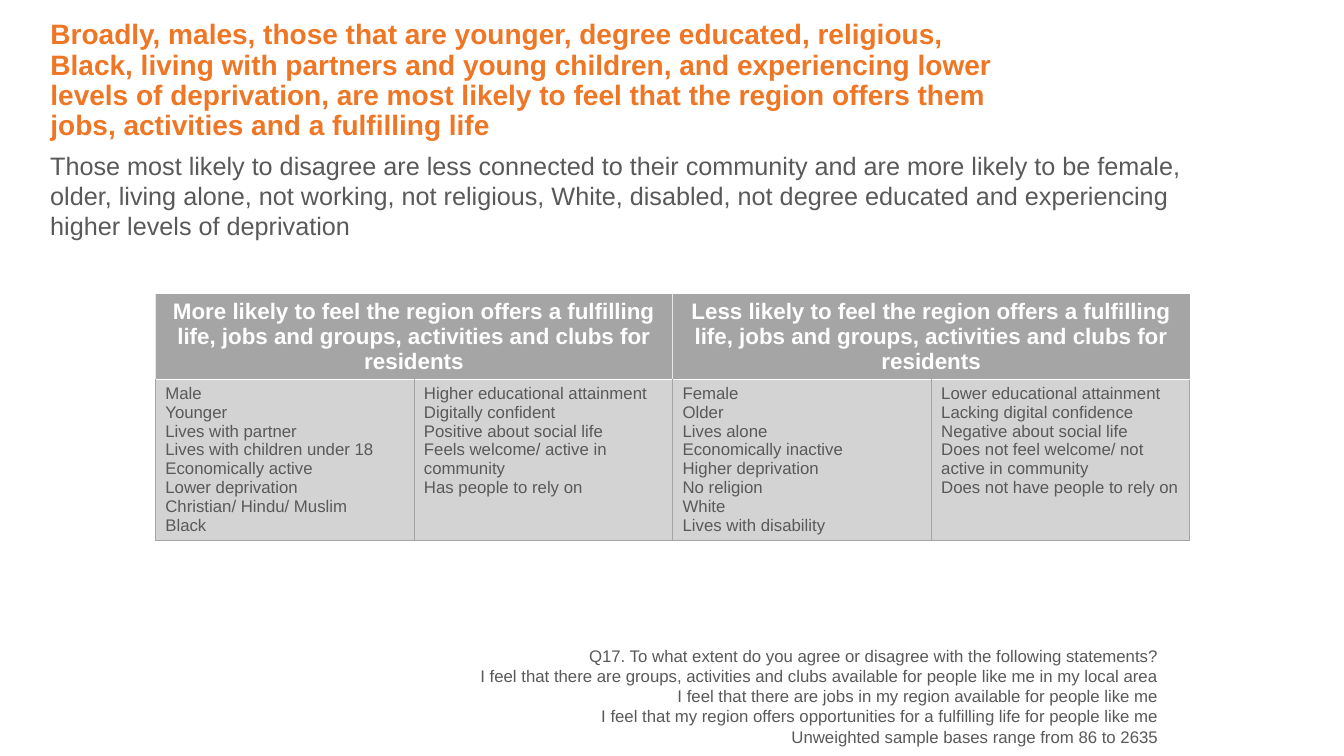
from dataclasses import dataclass

from lxml import etree
from pptx import Presentation
from pptx import util as u
from pptx.dml.color import RGBColor
from pptx.enum import text as t
from pptx.oxml import ns


@dataclass(frozen=True)
class Theme:
    """Colours, font and type sizes of the slide."""
    font: str = "Arial"
    accent: str = "EE7624"
    ink: str = "595959"
    white: str = "FFFFFF"
    grey: str = "A5A5A5"
    pale: str = "D3D3D3"
    rule: str = "E7E6E6"
    title: int = 20
    lead: int = 18
    head: int = 16
    small: int = 12


class Deck:
    """Holds the style and the current slide."""

    def __init__(self, theme):
        """Open a widescreen deck with one title-only slide."""
        self.theme = theme
        self.prs = Presentation()
        self.prs.slide_width = u.Inches(13.33)
        self.prs.slide_height = u.Inches(7.5)
        self.slide = self.prs.slides.add_slide(self.prs.slide_layouts[5])

    def fill(self, frame, lines, size, color, bold=False, align=t.PP_ALIGN.LEFT, space=1.0):
        """Fill a text frame with one paragraph per line."""
        frame.word_wrap = True
        for i, line in enumerate(lines):
            para = frame.paragraphs[0] if i == 0 else frame.add_paragraph()
            para.alignment = align
            para.line_spacing = space
            para.space_before = u.Pt(0)
            run = para.add_run()
            run.text = line
            run.font.name = self.theme.font
            run.font.size = u.Pt(size)
            run.font.bold = bold
            run.font.color.rgb = RGBColor.from_string(color)

    def title(self, box, line):
        """Place and fill the title."""
        shape = self.slide.shapes.title
        shape.left, shape.top, shape.width, shape.height = map(u.Inches, box)
        frame = shape.text_frame
        frame.auto_size = t.MSO_AUTO_SIZE.NONE
        frame.vertical_anchor = t.MSO_ANCHOR.MIDDLE
        self.fill(frame, [line], self.theme.title, self.theme.accent, True, space=0.9)

    def text(self, box, lines, size, align=t.PP_ALIGN.LEFT, anchor=t.MSO_ANCHOR.TOP, inset=None):
        """Add a text box."""
        frame = self.slide.shapes.add_textbox(*map(u.Inches, box)).text_frame
        frame.auto_size = t.MSO_AUTO_SIZE.SHAPE_TO_FIT_TEXT
        frame.vertical_anchor = anchor
        if inset is not None:
            frame.margin_left = frame.margin_right = u.Inches(inset)
            frame.margin_top = frame.margin_bottom = u.Inches(inset)
        self.fill(frame, lines, size, self.theme.ink, align=align)

    def paint(self, cell, fill, **edges):
        """Set the fill and the four borders of a cell."""
        props = cell._tc.get_or_add_tcPr()
        for side in "LRTB":
            color, width = edges.get(side, (self.theme.grey, 0.5))
            line = etree.SubElement(props, ns.qn(f"a:ln{side}"), w=str(u.Pt(width)))
            solid = etree.SubElement(line, ns.qn("a:solidFill"))
            etree.SubElement(solid, ns.qn("a:srgbClr"), val=color)
        cell.fill.solid()
        cell.fill.fore_color.rgb = RGBColor.from_string(fill)

    def table(self, box, rows, heads, lists):
        """Add a table whose heads each span two list columns."""
        th = self.theme
        grid = self.slide.shapes.add_table(2, len(lists), *map(u.Inches, box)).table
        grid.first_row = grid.horz_banding = False
        for row, high in zip(grid.rows, rows):
            row.height = u.Inches(high)
        for col in grid.columns:
            col.width = u.Inches(box[2] / len(lists))
        light, base = (th.rule, 1), (th.white, 1)
        for i, head in enumerate(heads):
            cell, mate = grid.cell(0, 2 * i), grid.cell(0, 2 * i + 1)
            cell.merge(mate)
            right = light if i < len(heads) - 1 else (th.grey, 0.5)
            for part in (cell, mate):
                self.paint(part, th.grey, L=light, R=right, B=base)
            cell.vertical_anchor = t.MSO_ANCHOR.MIDDLE
            self.fill(cell.text_frame, [head], th.head, th.white, True, t.PP_ALIGN.CENTER)
        for i, lines in enumerate(lists):
            cell = grid.cell(1, i)
            self.paint(cell, th.pale, T=base)
            self.fill(cell.text_frame, lines, th.small, th.ink)


HEADS = [
    f"{word} likely to feel the region offers a fulfilling life, jobs and groups, "
    "activities and clubs for residents" for word in ("More", "Less")
]
LISTS = [
    ["Male", "Younger", "Lives with partner", "Lives with children under 18",
     "Economically active", "Lower deprivation", "Christian/ Hindu/ Muslim", "Black"],
    ["Higher educational attainment", "Digitally confident", "Positive about social life",
     "Feels welcome/ active in community", "Has people to rely on"],
    ["Female", "Older", "Lives alone", "Economically inactive",
     "Higher deprivation", "No religion", "White", "Lives with disability"],
    ["Lower educational attainment", "Lacking digital confidence", "Negative about social life",
     "Does not feel welcome/ not active in community", "Does not have people to rely on"],
]
NOTES = [
    "Q17. To what extent do you agree or disagree with the following statements?",
    "I feel that there are groups, activities and clubs available for people like me in my local area",
    "I feel that there are jobs in my region available for people like me",
    "I feel that my region offers opportunities for a fulfilling life for people like me",
    "Unweighted sample bases range from 86 to 2635",
]


def main():
    """Build the slide and save it."""
    theme = Theme()
    deck = Deck(theme)
    deck.table((1.54, 2.92, 10.26, 2.44), (0.84, 1.6), HEADS, LISTS)
    deck.title((0.4, 0.37, 9.82, 0.87),
               "Broadly, males, those that are younger, degree educated, religious, Black, "
               "living with partners and young children, and experiencing lower levels of "
               "deprivation, are most likely to feel that the region offers them jobs, "
               "activities and a fulfilling life")
    deck.text((0.4, 1.44, 11.67, 1.01),
              ["Those most likely to disagree are less connected to their community and are "
               "more likely to be female, older, living alone, not working, not religious, "
               "White, disabled, not degree educated and experiencing higher levels of "
               "deprivation"], theme.lead)
    deck.text((1.67, 6.4, 9.82, 1.01), NOTES, theme.small,
              t.PP_ALIGN.RIGHT, t.MSO_ANCHOR.MIDDLE, 0)
    deck.prs.save("out.pptx")


if __name__ == "__main__":
    main()
